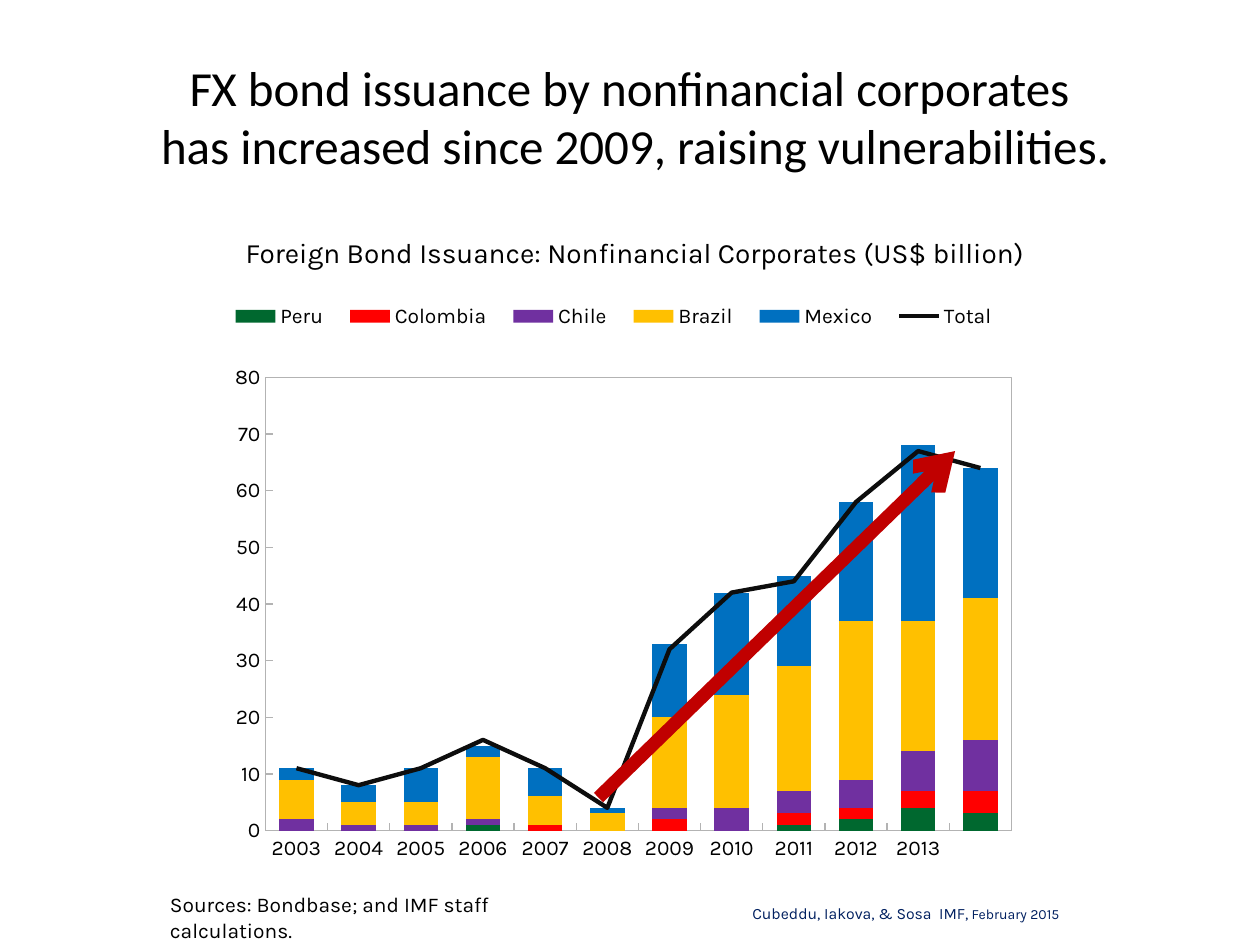
from pptx import Presentation
from pptx.chart.data import CategoryChartData
from pptx.dml.color import RGBColor
from pptx.enum.chart import XL_CHART_TYPE, XL_LEGEND_POSITION, XL_TICK_MARK
from pptx.enum.shapes import MSO_CONNECTOR
from pptx.enum.text import MSO_ANCHOR, PP_ALIGN
from pptx.oxml import parse_xml
from pptx.oxml.ns import nsdecls, qn
from pptx.util import Inches, Pt

STACKED = XL_CHART_TYPE.COLUMN_STACKED
BOTTOM = XL_LEGEND_POSITION.BOTTOM
INSIDE = XL_TICK_MARK.INSIDE
STRAIGHT = MSO_CONNECTOR.STRAIGHT
MIDDLE, TOP = MSO_ANCHOR.MIDDLE, MSO_ANCHOR.TOP
LEFT, CENTER = PP_ALIGN.LEFT, PP_ALIGN.CENTER

COLORS = {
    "black": "000000", "navy": "002060", "axis": "B3B3B3", "arrow": "C00000",
    "Peru": "00682F", "Colombia": "FF0000", "Chile": "7030A0",
    "Brazil": "FFC000", "Mexico": "0070C0", "Total": "0D0D0D",
}
YEARS = [str(year) for year in range(2003, 2014)] + [""]
BONDS = {
    "Peru": [0, 0, 0, 1, 0, 0, 0, 0, 1, 2, 4, 3],
    "Colombia": [0, 0, 0, 0, 1, 0, 2, 0, 2, 2, 3, 4],
    "Chile": [2, 1, 1, 1, 0, 0, 2, 4, 4, 5, 7, 9],
    "Brazil": [7, 4, 4, 11, 5, 3, 16, 20, 22, 28, 23, 25],
    "Mexico": [2, 3, 6, 2, 5, 1, 13, 18, 16, 21, 31, 23],
    "Total": [11, 8, 11, 16, 11, 4, 32, 42, 44, 58, 67, 64],
}


def color(name):
    return RGBColor.from_string(COLORS[name])


def style(font, size, name="Karla", hue="black"):
    font.size = Pt(size)
    font.name = name
    font.color.rgb = color(hue)


def add_title(slide, text):
    title = slide.shapes.title
    title.left, title.top = Inches(0.83), Inches(0.42)
    title.width, title.height = Inches(8.42), Inches(1)
    title.text_frame.text = text
    title.text_frame.vertical_anchor = MIDDLE
    para = title.text_frame.paragraphs[0]
    para.alignment = CENTER
    style(para.font, 28, "Calibri")


def add_text(slide, box, text, size, hue="black", align=CENTER, anchor=TOP, pad=(0, 0)):
    frame = slide.shapes.add_textbox(*map(Inches, box)).text_frame
    frame.word_wrap = True
    frame.vertical_anchor = anchor
    frame.margin_left = frame.margin_right = Inches(pad[0])
    frame.margin_top = frame.margin_bottom = Inches(pad[1])
    para = frame.paragraphs[0]
    para.alignment = align
    para.add_run().text = text
    style(para.font, size, hue=hue)
    return para


def set_layout(parent, place, box, inner=False):
    for old in parent.findall(qn("c:layout")):
        parent.remove(old)
    target = '<c:layoutTarget val="inner"/>' if inner else ""
    modes = "".join(f'<c:{key}Mode val="edge"/>' for key in "xy")
    sizes = "".join(f'<c:{key} val="{val}"/>' for key, val in zip("xywh", box))
    layout = parse_xml(
        f'<c:layout {nsdecls("c")}><c:manualLayout>{target}{modes}{sizes}'
        "</c:manualLayout></c:layout>")
    parent.insert(place, layout)


def move_to_line(plot):
    bars = plot._element
    total = bars.findall(qn("c:ser"))[-1]
    for flag in total.findall(qn("c:invertIfNegative")):
        total.remove(flag)
    lines = parse_xml(
        f'<c:lineChart {nsdecls("c")}><c:grouping val="standard"/>'
        '<c:varyColors val="0"/><c:marker val="1"/></c:lineChart>')
    lines.insert(2, total)
    for axis in bars.findall(qn("c:axId")):
        lines.append(parse_xml(f'<c:axId {nsdecls("c")} val="{axis.get("val")}"/>'))
    bars.addnext(lines)
    mark = parse_xml(f'<c:marker {nsdecls("c")}><c:symbol val="none"/></c:marker>')
    total.find(qn("c:cat")).addprevious(mark)


def add_bonds(slide):
    data = CategoryChartData()
    data.categories = YEARS
    for name, vals in BONDS.items():
        data.add_series(name, vals)
    box = map(Inches, (1.58, 2.17, 6.58, 4.86))
    chart = slide.shapes.add_chart(STACKED, *box, data).chart
    chart.has_title = False
    style(chart.font, 12)
    plot = chart.plots[0]
    plot.gap_width, plot.overlap, plot.vary_by_categories = 80, 100, False
    move_to_line(plot)
    for bar in plot.series:
        bar.format.fill.solid()
        bar.format.fill.fore_color.rgb = color(bar.name)
    total = chart.plots[1].series[0]
    total.smooth = False
    total.format.line.color.rgb = color("Total")
    total.format.line.width = Pt(2.5)
    for axis in (chart.category_axis, chart.value_axis):
        axis.has_major_gridlines = False
        axis.major_tick_mark = INSIDE
        axis.format.line.color.rgb = color("axis")
        axis.format.line.width = Pt(0.75)
    scale = chart.value_axis
    scale.minimum_scale, scale.maximum_scale, scale.major_unit = 0, 80, 10
    chart.has_legend = True
    chart.legend.position = BOTTOM
    chart.legend.include_in_layout = False
    set_layout(chart.legend._element, 1, (0.02, 0.03, 0.96, 0.08))
    area = plot._element.getparent()
    set_layout(area, 0, (0.08, 0.17, 0.9, 0.74), inner=True)
    area.append(parse_xml(
        f'<c:spPr {nsdecls("c", "a")}><a:noFill/><a:ln w="9525"><a:solidFill>'
        f'<a:srgbClr val="{COLORS["axis"]}"/></a:solidFill></a:ln></c:spPr>'))


def add_arrow(slide, start, end):
    arrow = slide.shapes.add_connector(STRAIGHT, *map(Inches, start + end))
    arrow.line.color.rgb = color("arrow")
    arrow.line.width = Pt(7.5)
    arrow.line._get_or_add_ln().append(
        parse_xml(f'<a:tailEnd {nsdecls("a")} type="arrow"/>'))
    arrow._element.spPr.append(parse_xml(f'<a:effectLst {nsdecls("a")}/>'))


def main():
    deck = Presentation()
    deck.slide_width, deck.slide_height = Inches(10), Inches(7.5)
    slide = deck.slides.add_slide(deck.slide_layouts[5])
    add_title(slide, "FX bond issuance by nonfinancial corporates \v"
                     "has increased since 2009, raising vulnerabilities.")
    credit = add_text(slide, (4.88, 7.17, 4.62, 0.67),
                      "Cubeddu, Iakova, & Sosa  IMF,", 9, "navy")
    credit.space_after = Pt(6)
    date = credit.add_run()
    date.text = " February 2015"
    date.font.size = Pt(8)
    add_text(slide, (1.58, 1.67, 6.92, 0.67),
             "Foreign Bond Issuance: Nonfinancial Corporates (US$ billion)",
             16, anchor=MIDDLE)
    add_bonds(slide)
    add_text(slide, (1.25, 7.03, 3.58, 0.3),
             "Sources: Bondbase; and IMF staff calculations.", 12,
             align=LEFT, pad=(0.1, 0.05))
    add_arrow(slide, (4.75, 6.33), (7.58, 3.58))
    deck.save("out.pptx")


if __name__ == "__main__":
    main()
